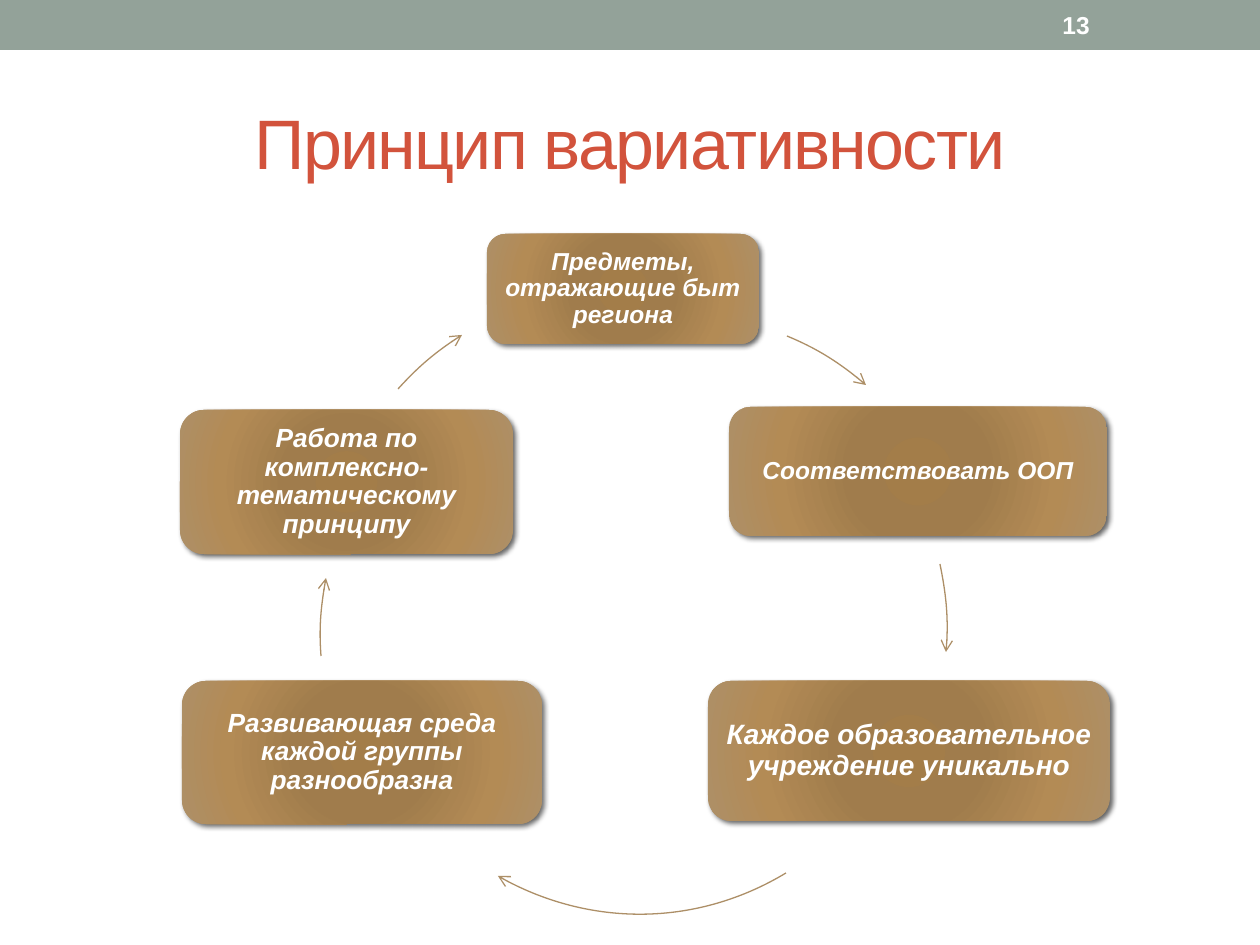
from typing import NamedTuple

import pptx
import pptx.dml.color
import pptx.enum.shapes
import pptx.enum.text
import pptx.oxml
import pptx.oxml.ns
import pptx.util

EMU_PER_PX = 914400 / 126
FONT = "Arial"
COLORS = {"band": "93A299", "title": "D2533C", "white": "FFFFFF",
          "arrow": "AD8F67", "shadow": "000000"}
GRADIENT = {0: "A37D49", 34: "A07C4C", 70: "B38B55", 100: "AD8F67"}
CYCLE_SIDE = 573
Point = tuple[int, int]


class Card(NamedTuple):
    left: int
    top: int
    width: int
    height: int
    size: int
    inset: int
    text: str


class Arc(NamedTuple):
    """A cubic curve inside the square frame of its cycle."""
    corner: Point
    points: tuple[Point, Point, Point, Point]


CARDS = [
    Card(487, 234, 272, 110, 14, 7, "Предметы, отражающие быт региона"),
    Card(729, 407, 378, 129, 14, 7, "Соответствовать ООП"),
    Card(708, 681, 402, 140, 16, 8, "Каждое образовательное учреждение уникально"),
    Card(182, 681, 360, 143, 15, 8, "Развивающая среда каждой группы разнообразна"),
    Card(180, 410, 333, 144, 15, 8, "Работа по комплексно-тематическому принципу"),
]
ARCS = [
    Arc((391, 314), ((787, 336), (816, 348), (843, 365), (866, 385))),
    Arc((374, 341), ((940, 564), (946, 593), (949, 623), (946, 652))),
    Arc((354, 340), ((786, 873), (698, 926), (587, 927), (498, 876))),
    Arc((320, 350), ((321, 656), (319, 630), (321, 604), (326, 578))),
    Arc((326, 292), ((398, 389), (417, 368), (438, 350), (462, 335))),
]


def px(value: int) -> pptx.util.Emu:
    return pptx.util.Emu(round(value * EMU_PER_PX))


def color(name: str) -> pptx.dml.color.RGBColor:
    return pptx.dml.color.RGBColor.from_string(COLORS[name])


def drawing_element(xml: str):
    """Parse one element, declaring the drawing namespace on its root tag."""
    tag = xml[1:].split(" ")[0].split(">")[0].rstrip("/")
    return pptx.oxml.parse_xml(
        xml.replace(tag, f"{tag} {pptx.oxml.ns.nsdecls('a')}", 1))


def write(shape, text: str, size: int, tint: str, centered: bool = True,
          bold: bool = True, italic: bool = False):
    frame = shape.text_frame
    frame.word_wrap = True
    frame.vertical_anchor = pptx.enum.text.MSO_ANCHOR.MIDDLE
    frame.text = text
    para = frame.paragraphs[0]
    align = pptx.enum.text.PP_ALIGN
    para.alignment = align.CENTER if centered else align.LEFT
    span = para.runs[0]
    span.font.name = FONT
    span.font.size = pptx.util.Pt(size)
    span.font.bold = bold
    span.font.italic = italic
    span.font.color.rgb = color(tint)
    return para


def draw_card(page, card: Card) -> None:
    box = page.shapes.add_shape(
        pptx.enum.shapes.MSO_SHAPE.ROUNDED_RECTANGLE,
        px(card.left), px(card.top), px(card.width), px(card.height))
    box.line.fill.background()
    box.shadow.inherit = False
    properties = box._element.spPr
    stops = "".join(
        f'<a:gs pos="{position * 1000}"><a:srgbClr val="{value}"/></a:gs>'
        for position, value in GRADIENT.items())
    geometry = properties.find(pptx.oxml.ns.qn("a:prstGeom"))
    geometry.addnext(drawing_element(
        f'<a:gradFill><a:gsLst>{stops}</a:gsLst><a:path path="circle">'
        '<a:fillToRect l="100000" t="100000" r="100000" b="100000"/>'
        '</a:path></a:gradFill>'))
    properties.find(pptx.oxml.ns.qn("a:effectLst")).append(drawing_element(
        '<a:outerShdw blurRad="38100" dist="25400" dir="2700000" rotWithShape="0">'
        f'<a:srgbClr val="{COLORS["shadow"]}"><a:alpha val="60000"/></a:srgbClr>'
        '</a:outerShdw>'))
    para = write(box, card.text, card.size, "white", italic=True)
    para.line_spacing = 0.9
    frame = box.text_frame
    frame.margin_left = frame.margin_right = px(card.inset)
    frame.margin_top = frame.margin_bottom = px(card.inset)


def draw_arc(page, arc: Arc) -> None:
    """Draw a cubic curve with an open arrowhead, framed by its whole cycle."""
    left, top = arc.corner
    builder = page.shapes.build_freeform(*arc.points[0], scale=EMU_PER_PX)
    builder.add_line_segments(arc.points[1:], close=False)
    curve = builder.convert_to_shape()
    curve.left, curve.top = px(left), px(top)
    curve.width = curve.height = px(CYCLE_SIDE)

    segments = list(curve._element.iter(pptx.oxml.ns.qn("a:lnTo")))
    outline = segments[0].getparent()
    outline.set("w", str(CYCLE_SIDE))
    outline.set("h", str(CYCLE_SIDE))
    bezier = drawing_element("<a:cubicBezTo/>")
    segments[0].addprevious(bezier)
    for segment in segments:
        bezier.append(segment[0])
        outline.remove(segment)
    for node, (x, y) in zip(outline.iter(pptx.oxml.ns.qn("a:pt")), arc.points):
        node.set("x", str(x - left))
        node.set("y", str(y - top))

    curve.fill.background()
    curve.shadow.inherit = False
    curve.line.color.rgb = color("arrow")
    curve.line.width = pptx.util.Pt(0.75)
    curve.line._get_or_add_ln().append(drawing_element('<a:tailEnd type="arrow"/>'))


def main() -> None:
    deck = pptx.Presentation()
    deck.slide_width, deck.slide_height = px(1260), px(945)
    page = deck.slides.add_slide(deck.slide_layouts[6])

    band = page.shapes.add_shape(
        pptx.enum.shapes.MSO_SHAPE.RECTANGLE, 0, 0, px(1260), px(50))
    band.fill.solid()
    band.fill.fore_color.rgb = color("band")
    band.line.fill.background()
    band.shadow.inherit = False

    title = page.shapes.add_textbox(px(63), px(73), px(1134), px(136))
    heading = write(title, "Принцип вариативности", 40, "title", bold=False)
    heading.runs[0]._r.get_or_add_rPr().set("spc", "-100")

    for card, arc in zip(CARDS, ARCS):
        draw_card(page, card)
        draw_arc(page, arc)

    number = page.shapes.add_textbox(px(1050), px(2), px(147), px(45))
    write(number, "13", 14, "white", centered=False)
    deck.save("out.pptx")


if __name__ == "__main__":
    main()
